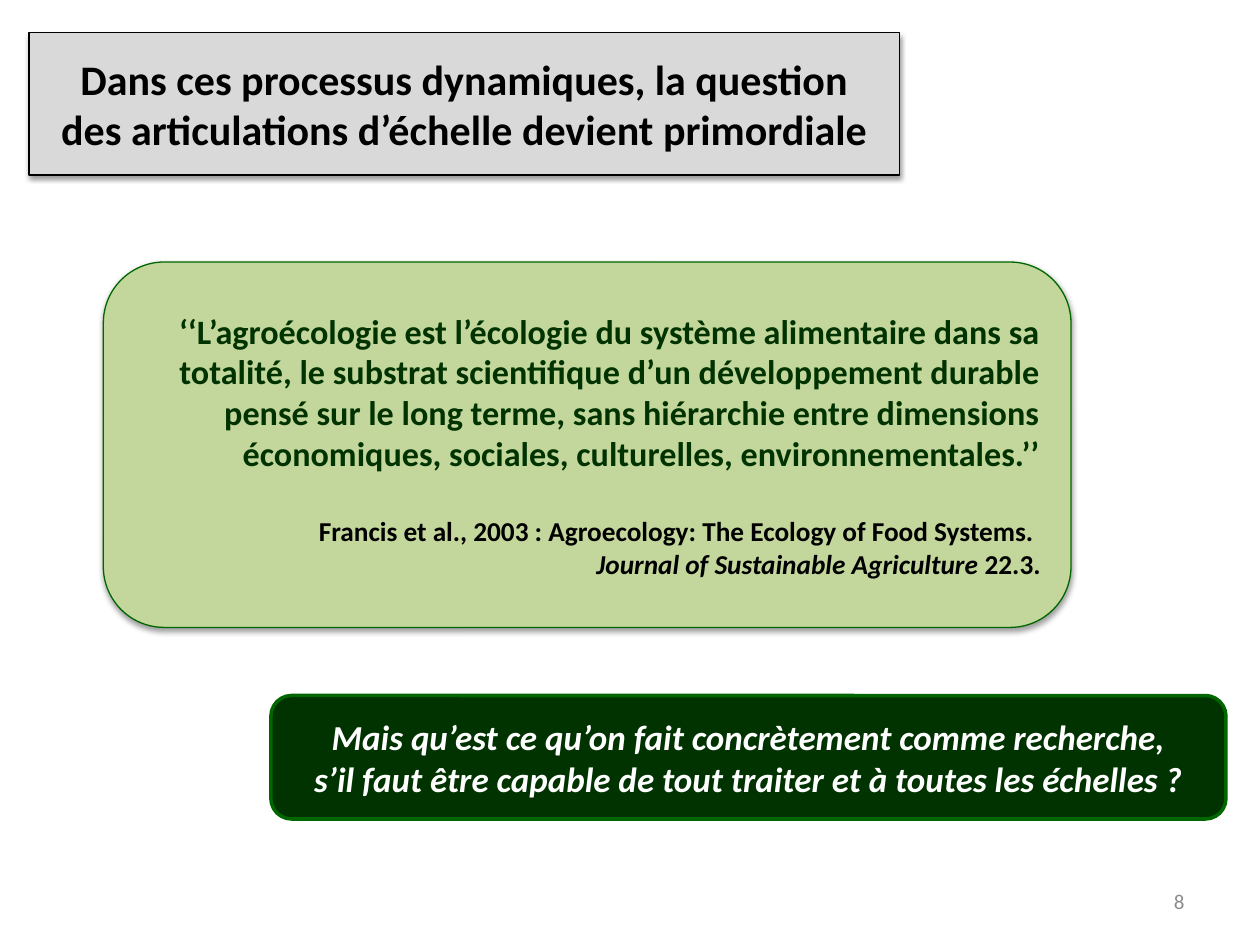
from dataclasses import dataclass
from lxml import etree
from pptx import Presentation
from pptx.dml.color import RGBColor
from pptx.enum.shapes import MSO_SHAPE
from pptx.enum.text import MSO_ANCHOR, PP_ALIGN
from pptx.oxml.ns import qn
from pptx.util import Inches, Pt

RECT, ROUND = MSO_SHAPE.RECTANGLE, MSO_SHAPE.ROUNDED_RECTANGLE
MID = MSO_ANCHOR.MIDDLE
MIDDLE, RIGHT = PP_ALIGN.CENTER, PP_ALIGN.RIGHT
FONT = "Calibri"
BLACK = RGBColor(0, 0, 0)
WHITE = RGBColor(255, 255, 255)
SILVER = RGBColor(0xD9, 0xD9, 0xD9)
GRAY = RGBColor(0x8C, 0x8C, 0x8C)
SAGE = RGBColor(0xC3, 0xD6, 0x9B)
GREEN = RGBColor(0, 0x66, 0)
FOREST = RGBColor(0, 0x33, 0)


@dataclass
class Run:
    text: str
    size: float
    color: RGBColor
    bold: bool = True
    slant: bool = False
    wrap: bool = False


@dataclass
class Para:
    runs: list[Run]
    gap: float = 0


@dataclass
class Box:
    at: tuple[float, float, float, float]
    kind: MSO_SHAPE
    fill: RGBColor
    edge: RGBColor
    width: float
    align: PP_ALIGN
    paras: list[Para]
    shadow: bool = False


def write(shape, paras: list[Para], align: PP_ALIGN) -> None:
    frame = shape.text_frame
    frame.word_wrap = True
    frame.vertical_anchor = MID
    for i, para in enumerate(paras):
        p = frame.add_paragraph() if i else frame.paragraphs[0]
        p.alignment = align
        p.space_before = Pt(para.gap)
        for item in para.runs:
            run = p.add_run()
            run.text = item.text
            font = run.font
            font.name = FONT
            font.size = Pt(item.size)
            font.bold = item.bold
            font.italic = item.slant
            font.color.rgb = item.color
            if item.wrap:
                p.add_line_break()


def shade(shape) -> None:
    effects = shape._element.spPr.find(qn("a:effectLst"))
    outer = etree.SubElement(
        effects, qn("a:outerShdw"), blurRad=str(Pt(3.1)), dist=str(Pt(1.6)),
        dir="5400000", rotWithShape="0")
    color = etree.SubElement(outer, qn("a:srgbClr"), val=str(BLACK))
    etree.SubElement(color, qn("a:alpha"), val="38000")


def draw(slide, box: Box) -> None:
    shape = slide.shapes.add_shape(box.kind, *map(Inches, box.at))
    shape.shadow.inherit = False
    shape.fill.solid()
    shape.fill.fore_color.rgb = box.fill
    shape.line.color.rgb = box.edge
    shape.line.width = Pt(box.width)
    if box.shadow:
        shade(shape)
    write(shape, box.paras, box.align)


TITLE = [Para([
    Run("Dans ces processus dynamiques, la question", 24, BLACK, wrap=True),
    Run("des articulations d’échelle devient primordiale", 24, BLACK),
])]
QUOTE = [
    Para([Run(
        "‘‘L’agroécologie est l’écologie du système alimentaire dans sa "
        "totalité, le substrat scientifique d’un développement durable "
        "pensé sur le long terme, sans hiérarchie entre dimensions "
        "économiques, sociales, culturelles, environnementales.’’",
        19.5, FOREST)]),
    Para([
        Run("Francis et al., 2003 : Agroecology: The Ecology of Food Systems. ",
            15.6, BLACK, wrap=True),
        Run("Journal of Sustainable Agriculture ", 15.6, BLACK, slant=True),
        Run("22.3.", 15.6, BLACK),
    ], gap=23),
]
ASK = [Para([
    Run("Mais qu’est ce qu’on fait concrètement comme recherche,",
        20, WHITE, slant=True, wrap=True),
    Run("s’il faut être capable de tout traiter et à toutes les échelles ?",
        20, WHITE, slant=True),
])]
BOXES = [
    Box((0.23, 0.26, 6.91, 1.13), RECT, SILVER, BLACK, 0.75, MIDDLE, TITLE, True),
    Box((0.82, 2.08, 7.68, 2.9), ROUND, SAGE, GREEN, 0.75, RIGHT, QUOTE, True),
    Box((2.15, 5.52, 7.58, 0.98), ROUND, FOREST, GREEN, 2, MIDDLE, ASK),
]


def main() -> None:
    deck = Presentation()
    deck.slide_width, deck.slide_height = Inches(10), Inches(7.5)
    slide = deck.slides.add_slide(deck.slide_layouts[6])
    for box in BOXES:
        draw(slide, box)
    page = slide.shapes.add_textbox(*map(Inches, (7.17, 6.95, 2.33, 0.4)))
    write(page, [Para([Run("8", 12, GRAY, bold=False)])], RIGHT)
    deck.save("out.pptx")


if __name__ == "__main__":
    main()
